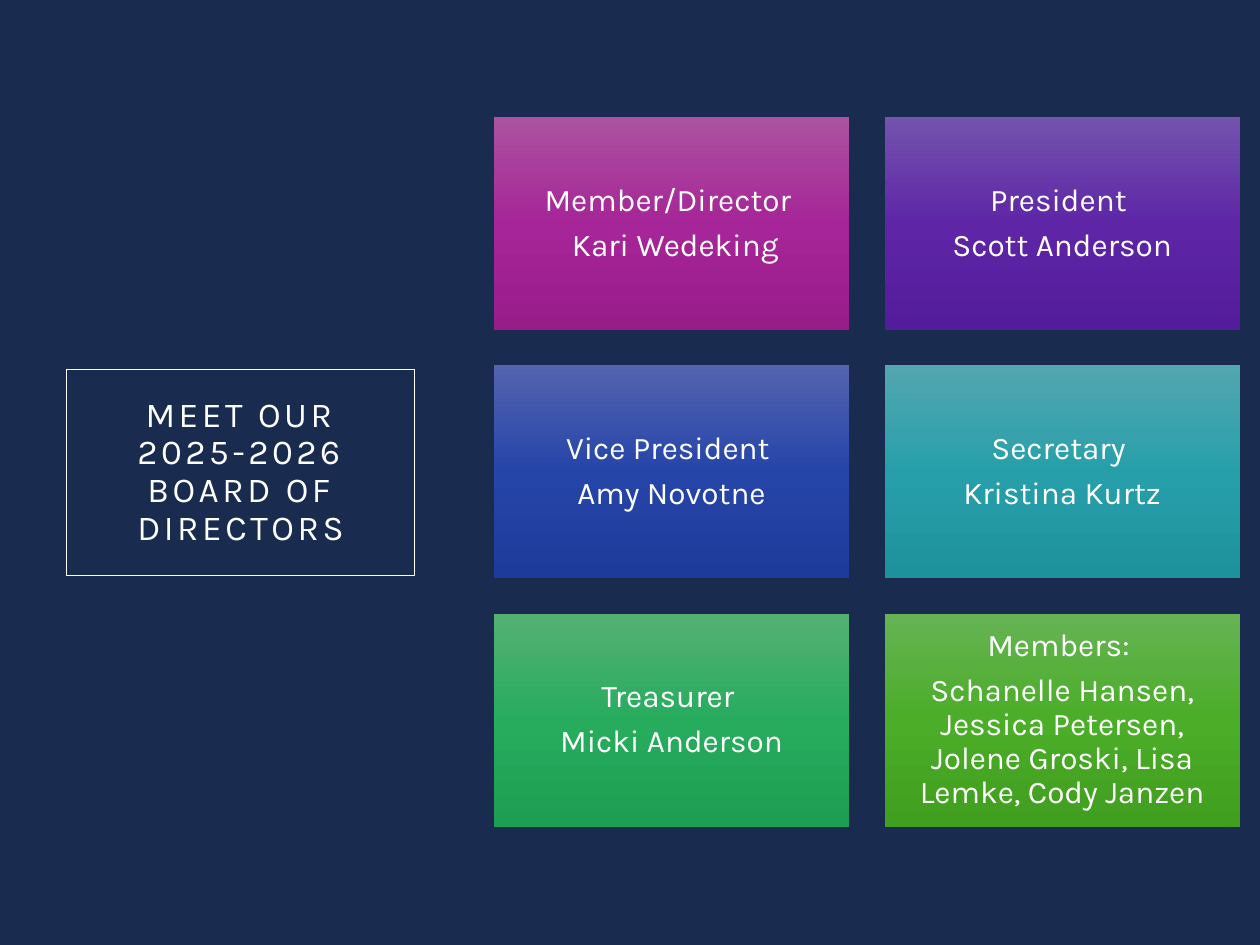
from copy import deepcopy

from pptx import Presentation
from pptx.dml.color import RGBColor
from pptx.enum.shapes import MSO_SHAPE as Shape
from pptx.enum.text import MSO_ANCHOR as Anchor, MSO_AUTO_SIZE as AutoSize, PP_ALIGN as Align
from pptx.oxml.ns import qn
from pptx.util import Inches, Pt

FONT = "Karla"
NAVY, WHITE = "192C4F", "FFFFFF"
TITLE = "MEET OUR 2025-2026 BOARD OF DIRECTORS"
COLUMNS = 2
CARD_WIDTH, CARD_HEIGHT, GAP = 2.82, 1.69, 0.28
CARDS = [
    (("Member/Director ", " Kari Wedeking"), ("AC53A0", "A62598", "991C8B")),
    (("President ", "Scott Anderson"), ("7353AD", "5E26A7", "531C9A")),
    (("Vice President ", "Amy Novotne"), ("5363AF", "2645A9", "1D3B9B")),
    (("Secretary ", "Kristina Kurtz"), ("53A7B0", "279FAA", "1D929D")),
    (("Treasurer ", "Micki Anderson"), ("54B173", "27AC5E", "1E9E52")),
    (("Members: ", "Schanelle Hansen, Jessica Petersen, Jolene Groski, Lisa Lemke, Cody Janzen"),
     ("66B354", "4BAD28", "409F1E")),
]


def color(value):
    return RGBColor.from_string(value)


def set_all(target, values):
    for name, value in values.items():
        setattr(target, name, value)


def write_text(shape, lines, size, inset, space_after, spacing=0):
    frame = shape.text_frame
    frame.text = "\n".join(lines)
    margins = {f"margin_{side}": Inches(inset) for side in ("left", "top", "right", "bottom")}
    set_all(frame, {"word_wrap": True, "auto_size": AutoSize.NONE,
                    "vertical_anchor": Anchor.MIDDLE, **margins})
    for para in frame.paragraphs:
        set_all(para, {"alignment": Align.CENTER, "line_spacing": 0.9,
                       "space_before": Pt(0), "space_after": Pt(space_after)})
        for span in para.runs:
            set_all(span.font, {"name": FONT, "size": Pt(size), "bold": False})
            span.font.color.rgb = color(WHITE)
            if spacing:
                span.font._element.set("spc", str(spacing * 100))


def fill_gradient(shape, colors):
    shape.fill.gradient()
    shape.fill.gradient_angle = 270
    stop_list = shape._element.spPr.find(f".//{qn('a:gsLst')}")
    stop_list.append(deepcopy(stop_list[0]))
    for index, (stop, value) in enumerate(zip(shape.fill.gradient_stops, colors)):
        stop.color.rgb = color(value)
        stop.position = index / 2


def add_title(page, left, top, width, height):
    title = page.shapes.title
    set_all(title, {"left": Inches(left), "top": Inches(top),
                    "width": Inches(width), "height": Inches(height)})
    title.line.color.rgb = color(WHITE)
    title.line.width = Pt(0.75)
    write_text(title, [TITLE], size=20, inset=0.2, space_after=6, spacing=2)


def add_card(page, left, top, width, height, lines, colors):
    card = page.shapes.add_shape(Shape.RECTANGLE, Inches(left), Inches(top),
                                 Inches(width), Inches(height))
    card.shadow.inherit = False
    card.line.fill.background()
    fill_gradient(card, colors)
    write_text(card, lines, size=18, inset=0.07, space_after=6.3)


def add_board(page, left, top):
    for index, (lines, colors) in enumerate(CARDS):
        row, column = divmod(index, COLUMNS)
        add_card(page, left + column * (CARD_WIDTH + GAP), top + row * (CARD_HEIGHT + GAP),
                 CARD_WIDTH, CARD_HEIGHT, lines, colors)


def main():
    deck = Presentation()
    set_all(deck, {"slide_width": Inches(10), "slide_height": Inches(7.5)})
    page = deck.slides.add_slide(deck.slide_layouts[5])
    page.background.fill.solid()
    page.background.fill.fore_color.rgb = color(NAVY)
    add_title(page, 0.53, 2.93, 2.76, 1.64)
    add_board(page, 3.92, 0.93)
    deck.save("out.pptx")


if __name__ == "__main__":
    main()
